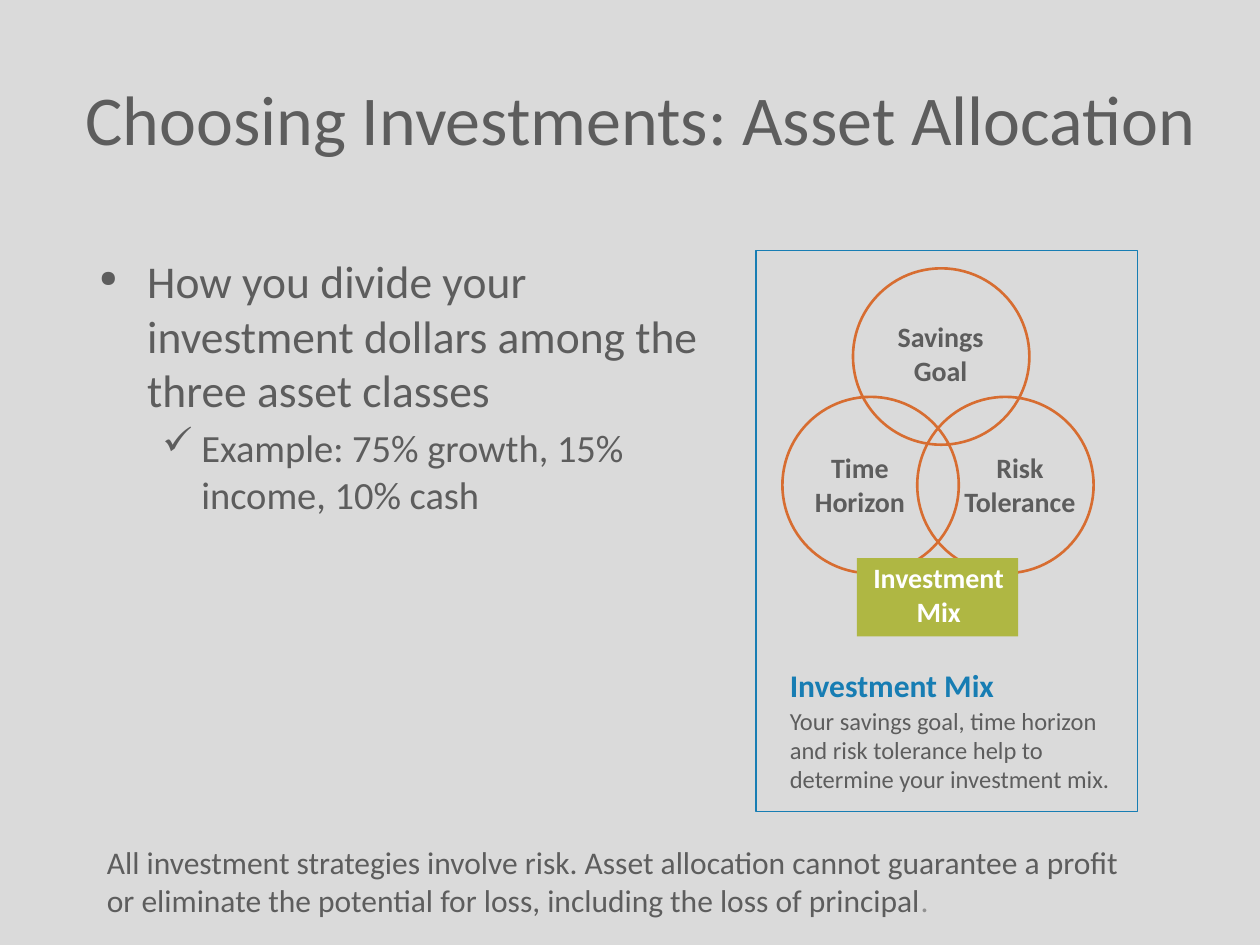
from dataclasses import dataclass

from lxml.etree import SubElement
from pptx import Presentation
from pptx.dml.color import RGBColor
from pptx.enum.shapes import MSO_SHAPE
from pptx.enum.text import MSO_ANCHOR, PP_ALIGN
from pptx.oxml.ns import qn
from pptx.util import Inches, Pt

BACKGROUND = RGBColor(0xDA, 0xDA, 0xDA)
GREY = RGBColor(0x5D, 0x5D, 0x5D)
PALE_GREY = RGBColor(0x91, 0x91, 0x91)
BLUE = RGBColor(0x17, 0x7D, 0xB3)
ORANGE = RGBColor(0xD7, 0x6D, 0x31)
GREEN = RGBColor(0xAF, 0xB7, 0x43)
WHITE = RGBColor(0xFF, 0xFF, 0xFF)

CIRCLE_SIZE = 1.4


@dataclass(frozen=True)
class Area:
    left: float
    top: float
    width: float
    height: float

    def lengths(self):
        return tuple(Inches(n) for n in (self.left, self.top, self.width, self.height))


@dataclass(frozen=True)
class Label:
    text: str
    area: Area
    size: int
    color: RGBColor = GREY
    bold: bool = False
    align: PP_ALIGN = PP_ALIGN.LEFT
    anchor: MSO_ANCHOR = MSO_ANCHOR.TOP


@dataclass(frozen=True)
class Bullet:
    text: str
    symbol: str
    percent: int
    size: int
    level: int
    margin: float
    hanging: float
    space_before: float


def style(para, size: int, color: RGBColor, bold: bool = False) -> None:
    font = para.font
    font.name = "Calibri"
    font.size = Pt(size)
    font.bold = bold
    font.color.rgb = color


def add_frame(page, area: Area):
    frame = page.shapes.add_textbox(*area.lengths()).text_frame
    frame.word_wrap = True
    return frame


def add_label(page, label: Label):
    frame = add_frame(page, label.area)
    frame.vertical_anchor = label.anchor
    para = frame.paragraphs[0]
    para.text = label.text
    para.alignment = label.align
    style(para, label.size, label.color, label.bold)
    return para


def add_bullets(page, area: Area, bullets: list[Bullet]) -> None:
    frame = add_frame(page, area)
    for index, bullet in enumerate(bullets):
        para = frame.add_paragraph() if index else frame.paragraphs[0]
        para.text = bullet.text
        para.level = bullet.level
        if index:
            para.space_before = Pt(bullet.space_before)
        properties = para._p.get_or_add_pPr()
        properties.set("marL", str(Inches(bullet.margin)))
        properties.set("indent", str(-Inches(bullet.hanging)))
        color = SubElement(properties, qn("a:buClr"))
        SubElement(color, qn("a:srgbClr"), val=str(GREY))
        SubElement(properties, qn("a:buSzPct"), val=str(bullet.percent * 1000))
        SubElement(properties, qn("a:buChar"), char=bullet.symbol)
        style(para, bullet.size, GREY)


def add_outline(page, kind: MSO_SHAPE, area: Area, color: RGBColor, weight: float) -> None:
    shape = page.shapes.add_shape(kind, *area.lengths())
    shape.shadow.inherit = False
    shape.fill.background()
    shape.line.color.rgb = color
    shape.line.width = Pt(weight)


def add_block(page, area: Area, color: RGBColor) -> None:
    shape = page.shapes.add_shape(MSO_SHAPE.RECTANGLE, *area.lengths())
    shape.shadow.inherit = False
    shape.fill.solid()
    shape.fill.fore_color.rgb = color
    shape.line.fill.background()


def add_diagram(page) -> None:
    add_outline(page, MSO_SHAPE.RECTANGLE, Area(6, 1.99, 3.03, 4.45), BLUE, 0.75)
    for left, top in ((6.77, 2.13), (7.28, 3.15), (6.21, 3.15)):
        area = Area(left, top, CIRCLE_SIZE, CIRCLE_SIZE)
        add_outline(page, MSO_SHAPE.OVAL, area, ORANGE, 1.5)
    add_block(page, Area(6.8, 4.43, 1.28, 0.62), GREEN)

    for text, left, top, width, color in (
        ("Savings\nGoal", 6.76, 2.49, 1.41, GREY),
        ("Time\nHorizon", 6.12, 3.53, 1.41, GREY),
        ("Risk\nTolerance", 7.39, 3.53, 1.41, GREY),
        ("Investment\nMix", 6.83, 4.4, 1.24, WHITE),
    ):
        area = Area(left, top, width, 0.64)
        add_label(page, Label(text, area, 16, color, bold=True, align=PP_ALIGN.CENTER))

    add_label(page, Label("Investment Mix", Area(6.17, 5.24, 2.46, 0.4), 18, BLUE, bold=True))
    add_label(page, Label(
        "Your savings goal, time horizon and risk tolerance help to "
        "determine your investment mix.",
        Area(6.17, 5.55, 2.82, 0.81), 14,
    ))


def add_disclaimer(page) -> None:
    para = add_label(page, Label(
        "All investment strategies involve risk. Asset allocation cannot guarantee a profit\n"
        "or eliminate the potential for loss, including the loss of principal",
        Area(0.75, 6.64, 8.85, 0.71), 18,
    ))
    span = para.add_run()
    span.text = "."
    span.font.color.rgb = PALE_GREY


def main() -> None:
    deck = Presentation()
    deck.slide_width, deck.slide_height = Inches(10), Inches(7.5)
    page = deck.slides.add_slide(deck.slide_layouts[6])
    page.background.fill.solid()
    page.background.fill.fore_color.rgb = BACKGROUND

    add_label(page, Label(
        "Choosing Investments: Asset Allocation",
        Area(0.58, 0.58, 10, 0.7), 40, anchor=MSO_ANCHOR.MIDDLE,
    ))
    add_bullets(page, Area(0.69, 1.96, 5.14, 2.56), [
        Bullet("How you divide your investment dollars among the three asset classes",
               "●", 50, 26, 0, 0.38, 0.38, 0),
        Bullet("Example: 75% growth, 15% income, 10% cash",
               "✓", 100, 22, 1, 0.81, 0.31, 4.4),
    ])
    add_diagram(page)
    add_disclaimer(page)
    deck.save("out.pptx")


if __name__ == "__main__":
    main()
